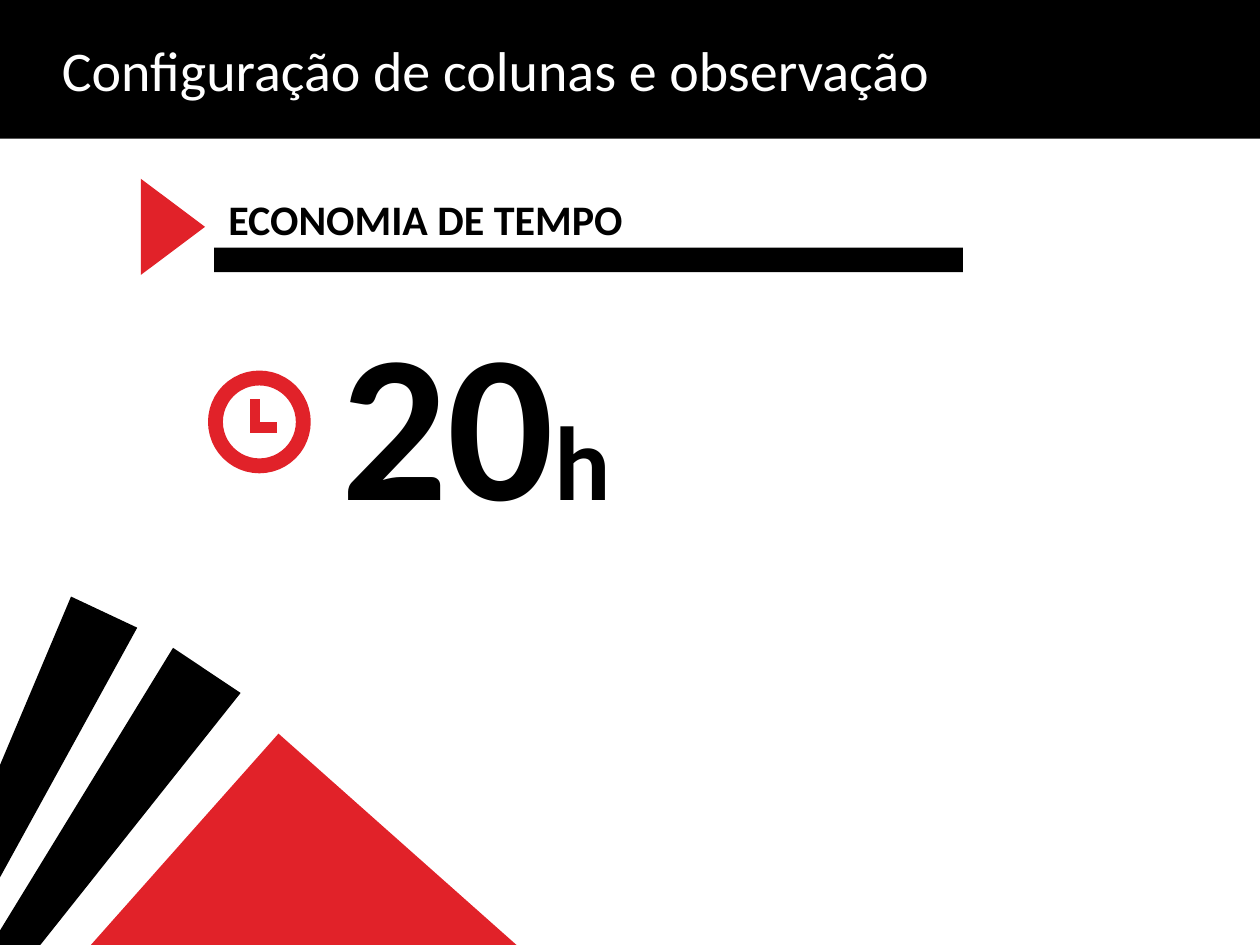
from pptx import Presentation
from pptx.dml.color import RGBColor
from pptx.enum.shapes import MSO_CONNECTOR, MSO_SHAPE
from pptx.enum.text import MSO_ANCHOR, MSO_AUTO_SIZE, PP_ALIGN
from pptx.oxml.ns import qn
from pptx.util import Pt
from lxml import etree

RECTANGLE = MSO_SHAPE.RECTANGLE
TRIANGLE = MSO_SHAPE.ISOSCELES_TRIANGLE
OVAL = MSO_SHAPE.OVAL
STRAIGHT = MSO_CONNECTOR.STRAIGHT
MIDDLE = MSO_ANCHOR.MIDDLE
LEFT = PP_ALIGN.LEFT
NO_AUTOFIT = MSO_AUTO_SIZE.NONE
TITLE_ONLY = 5

FONT = "Calibri"
BLACK, WHITE, RED = "000000", "FFFFFF", "E12229"


def paint(target, color):
    """Give a fill or a line's fill one solid colour."""
    target.solid()
    target.fore_color.rgb = RGBColor.from_string(color)


def style_font(font, size, color, bold=False):
    font.name = FONT
    font.size = Pt(size)
    font.bold = bold
    font.color.rgb = RGBColor.from_string(color)


def place(shape, left, top, width, height):
    shape.left, shape.top = Pt(left), Pt(top)
    shape.width, shape.height = Pt(width), Pt(height)


def set_title(page, text):
    """Turn the title placeholder into a full-width black band."""
    title = page.shapes.title
    place(title, 0, 0, 720, 79.2)
    paint(title.fill, BLACK)
    frame = title.text_frame
    frame.text = text
    frame.auto_size = NO_AUTOFIT
    frame.vertical_anchor = MIDDLE
    frame.margin_left = Pt(35.3)
    para = frame.paragraphs[0]
    para.alignment = LEFT
    style_font(para.font, 32, WHITE)


def add_solid(shapes, kind, left, top, width, height, color, rotation=0):
    shape = shapes.add_shape(kind, Pt(left), Pt(top), Pt(width), Pt(height))
    shape.shadow.inherit = False
    shape.rotation = rotation
    paint(shape.fill, color)
    shape.line.fill.background()
    return shape


def add_ray(shapes, points, color):
    corners = [(Pt(x), Pt(y)) for x, y in points]
    builder = shapes.build_freeform(*corners[0], scale=1.0)
    builder.add_line_segments(corners[1:], close=True)
    ray = builder.convert_to_shape()
    ray.shadow.inherit = False
    paint(ray.fill, color)
    ray.line.fill.background()


def add_text(page, left, top, width, height, spans, wrap=True):
    """Add one bold paragraph made of (text, size) spans."""
    box = page.shapes.add_textbox(Pt(left), Pt(top), Pt(width), Pt(height))
    box.text_frame.word_wrap = wrap
    para = box.text_frame.paragraphs[0]
    for text, size in spans:
        span = para.add_run()
        span.text = text
        style_font(span.font, size, BLACK, bold=True)


def add_hand(shapes, start, end, width):
    hand = shapes.add_connector(STRAIGHT, *map(Pt, start + end))
    paint(hand.line.fill, RED)
    hand.line.width = Pt(width)
    etree.SubElement(hand.line._get_or_add_ln().getparent(), qn("a:effectLst"))


def add_clock(page):
    shapes = page.shapes.add_group_shape().shapes
    ring = add_solid(shapes, OVAL, 123.1, 216, 50.2, 50.2, WHITE)
    ring.fill.background()
    paint(ring.line.fill, RED)
    ring.line.width = Pt(8.5)
    add_hand(shapes, (145.6, 228.2), (145.6, 247), 5.75)
    add_hand(shapes, (158.1, 244.2), (142.7, 244.2), 6)


def add_corner_rays(page):
    shapes = page.shapes.add_group_shape().shapes
    add_ray(shapes, [(40.6, 340.9), (78.4, 358.7), (-116.6, 713.5)], BLACK)
    add_ray(shapes, [(98.9, 370.2), (137.5, 396), (-99.4, 694.1)], BLACK)
    add_solid(shapes, RECTANGLE, -31, 504.7, 414, 412.6, RED, rotation=311.6)


def main():
    deck = Presentation()
    deck.slide_width, deck.slide_height = Pt(720), Pt(540)
    page = deck.slides.add_slide(deck.slide_layouts[TITLE_ONLY])
    set_title(page, "Configuração de colunas e observação")

    add_text(page, 187.9, 162.7, 170, 152.6, [("20", 120), ("h", 60)], wrap=False)
    add_solid(page.shapes, TRIANGLE, 71.3, 111.3, 55, 36.7, RED, rotation=90)
    add_text(page, 123.4, 106.9, 252.7, 36.4, [("ECONOMIA DE TEMPO", 24)])
    add_solid(page.shapes, RECTANGLE, 122.3, 141.5, 428, 14.1, BLACK)

    add_corner_rays(page)
    add_clock(page)
    deck.save("out.pptx")


if __name__ == "__main__":
    main()
